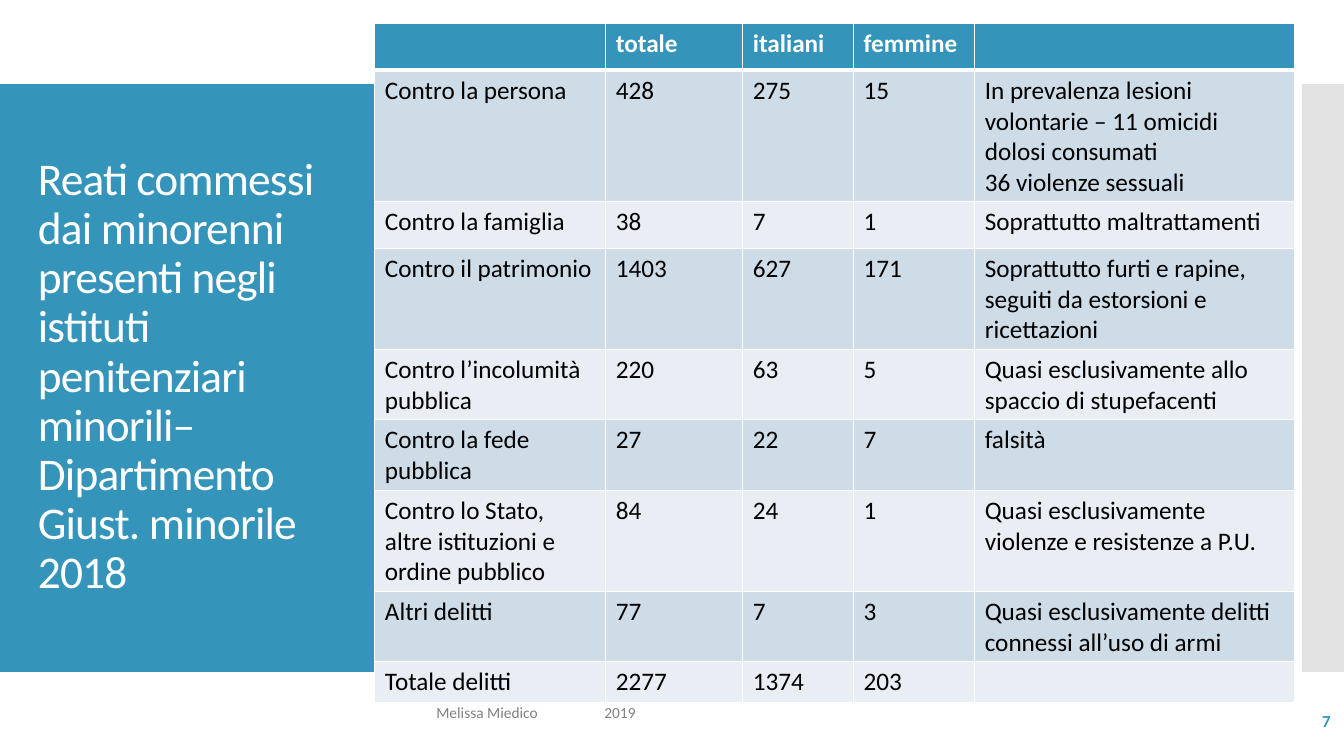
import pptx
import pptx.util
import pptx.dml.color
import pptx.enum.shapes
import pptx.enum.text
import pptx.oxml
import pptx.oxml.ns
from lxml import etree

Pt = pptx.util.Pt
ANCHOR = pptx.enum.text.MSO_ANCHOR
ALIGN = pptx.enum.text.PP_ALIGN
qn = pptx.oxml.ns.qn

# Content
TITLE = ("Reati commessi dai minorenni presenti negli istituti penitenziari minorili–\v"
         "Dipartimento Giust. minorile 2018")
AUTHOR_YEAR = "Melissa Miedico\t2019"
PAGE = "7"
ROWS = [
    ("", "totale", "italiani", "femmine", ""),
    ("Contro la persona", "428", "275", "15",
     "In prevalenza lesioni volontarie – 11 omicidi dolosi consumati\n36 violenze sessuali"),
    ("Contro la famiglia", "38", "7", "1", "Soprattutto maltrattamenti"),
    ("Contro il patrimonio", "1403", "627", "171",
     "Soprattutto furti e rapine, seguiti da estorsioni e ricettazioni"),
    ("Contro l’incolumità pubblica", "220", "63", "5",
     "Quasi esclusivamente allo spaccio di stupefacenti"),
    ("Contro la fede pubblica", "27", "22", "7", "falsità"),
    ("Contro lo Stato, altre istituzioni e ordine pubblico", "84", "24", "1",
     "Quasi esclusivamente violenze e resistenze a P.U."),
    ("Altri delitti", "77", "7", "3",
     "Quasi esclusivamente delitti connessi all’uso di armi"),
    ("Totale delitti", "2277", "1374", "203", ""),
]
COL_WIDTHS = [164.9, 97.9, 79.2, 86.5, 228.5]
ROW_HEIGHTS = [33.6, 88.6, 33.6, 67.7, 48, 47.5, 67.7, 48, 27.4]
COLORS = {"accent": "3494BA", "side": "C8C8C8", "band": "CEDCE7", "light": "E8EEF3",
          "white": "FFFFFF", "black": "000000", "grey": "808080"}
FONT = "Calibri"


def rgb(name):
    return pptx.dml.color.RGBColor.from_string(COLORS[name])


def write(tf, text, size, color, bold=False, align=ALIGN.LEFT, line=None, spacing=None, tab=None):
    tf.word_wrap = True
    tf.text = text
    for p in tf.paragraphs:
        p.alignment = align
        if line:
            p.line_spacing = line
        if tab:
            tabs = etree.SubElement(p._p.get_or_add_pPr(), qn("a:tabLst"))
            etree.SubElement(tabs, qn("a:tab"), pos=str(Pt(tab)), algn="l")
        for font in [p.font] + [r.font for r in p.runs]:
            font.name, font.size, font.bold = FONT, Pt(size), bold
            font.color.rgb = rgb(color)
        for r in p.runs:
            if spacing:
                r._r.get_or_add_rPr().set("spc", str(int(spacing * 100)))


def add_text(box, text, anchor=ANCHOR.MIDDLE, top=3.6, **fmt):
    tf = slide.shapes.add_textbox(*map(Pt, box)).text_frame
    tf.vertical_anchor = anchor
    tf.margin_top = Pt(top)
    write(tf, text, **fmt)


def add_panel(box, color, alpha=None):
    sp = slide.shapes.add_shape(pptx.enum.shapes.MSO_SHAPE.RECTANGLE, *map(Pt, box))
    sp.shadow.inherit = False
    sp.fill.solid()
    sp.fill.fore_color.rgb = rgb(color)
    sp.line.fill.background()
    if alpha:
        clr = sp._element.spPr.find(qn("a:solidFill"))[0]
        etree.SubElement(clr, qn("a:alpha"), val=str(alpha * 1000))


def set_borders(cell, widths):
    tcPr = cell._tc.get_or_add_tcPr()
    for side, width in widths.items():
        ln = etree.SubElement(tcPr, qn("a:ln" + side), w=str(Pt(width)))
        fill = etree.SubElement(ln, qn("a:solidFill"))
        etree.SubElement(fill, qn("a:srgbClr"), val=COLORS["white"])


prs = pptx.Presentation()
prs.slide_width, prs.slide_height = Pt(960), Pt(540)
slide = prs.slides.add_slide(prs.slide_layouts[6])

# Side panels and title
add_panel((0, 60, 271.5, 420), "accent")
add_panel((930, 60, 30, 420), "side", alpha=50)
add_text((20, 88.5, 232, 362), TITLE, size=32.4, color="white", line=0.9, spacing=-0.6)

# Table of offences
table = slide.shapes.add_table(len(ROWS), len(COL_WIDTHS), Pt(267.8), Pt(16.6),
                               Pt(sum(COL_WIDTHS)), Pt(sum(ROW_HEIGHTS))).table
table.horz_banding = False
for col, width in zip(table.columns, COL_WIDTHS):
    col.width = Pt(width)
for i, (row, height, texts) in enumerate(zip(table.rows, ROW_HEIGHTS, ROWS)):
    row.height = Pt(height)
    head = i == 0
    shade = "accent" if head else "band" if i % 2 else "light"
    for cell, text in zip(row.cells, texts):
        set_borders(cell, {"L": 1, "R": 1, "T": 3 if i == 1 else 1, "B": 3 if head else 1})
        cell.fill.solid()
        cell.fill.fore_color.rgb = rgb(shade)
        write(cell.text_frame, text, size=18, color="white" if head else "black", bold=head)

# Footer and page number
add_text((304.6, 500.4, 465, 28.8), AUTHOR_YEAR, anchor=ANCHOR.TOP, top=1.5,
         size=11, color="grey", tab=120)
add_text((837.4, 500.4, 120.2, 28.8), PAGE, size=12, color="accent", bold=True, align=ALIGN.RIGHT)

prs.save("out.pptx")
